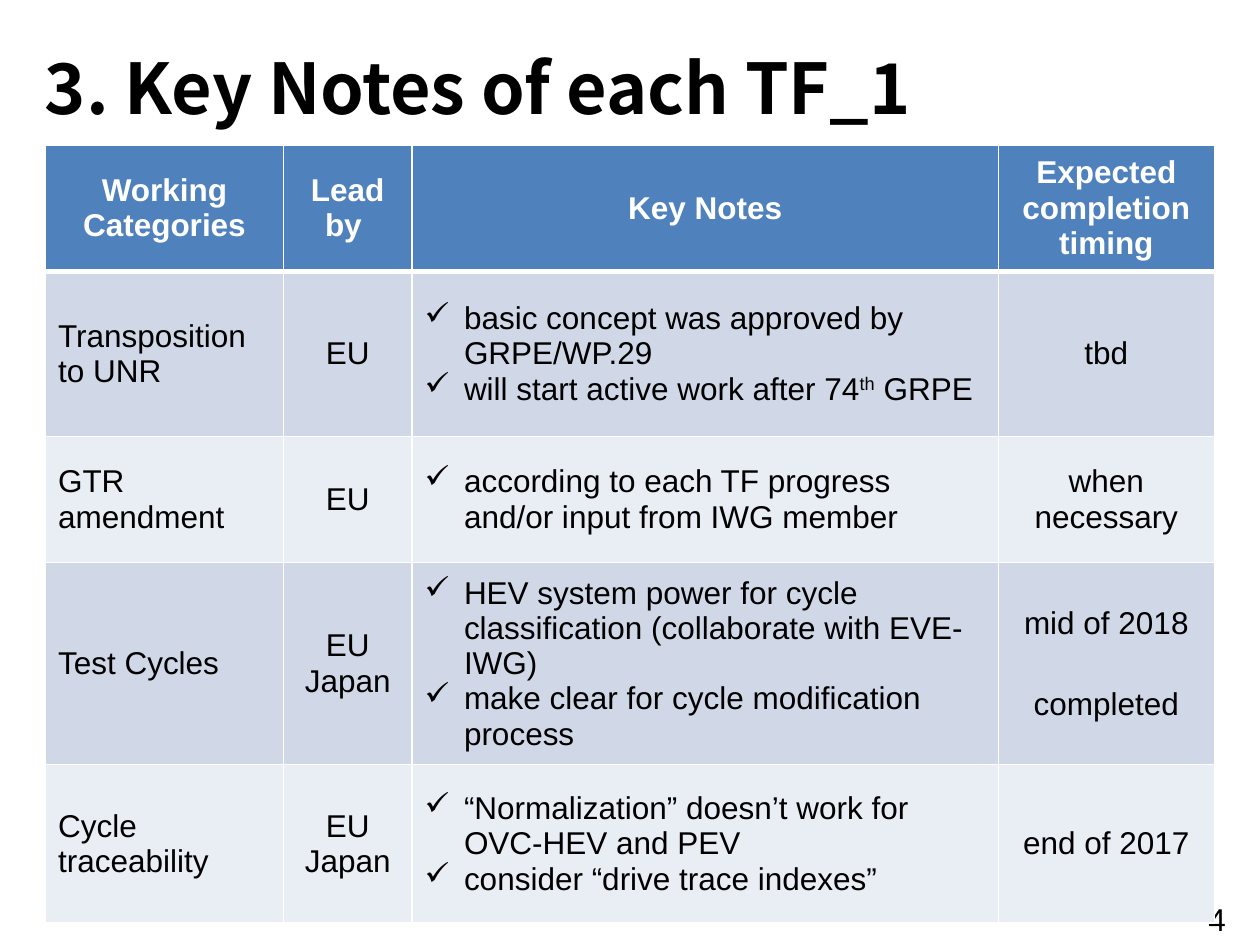
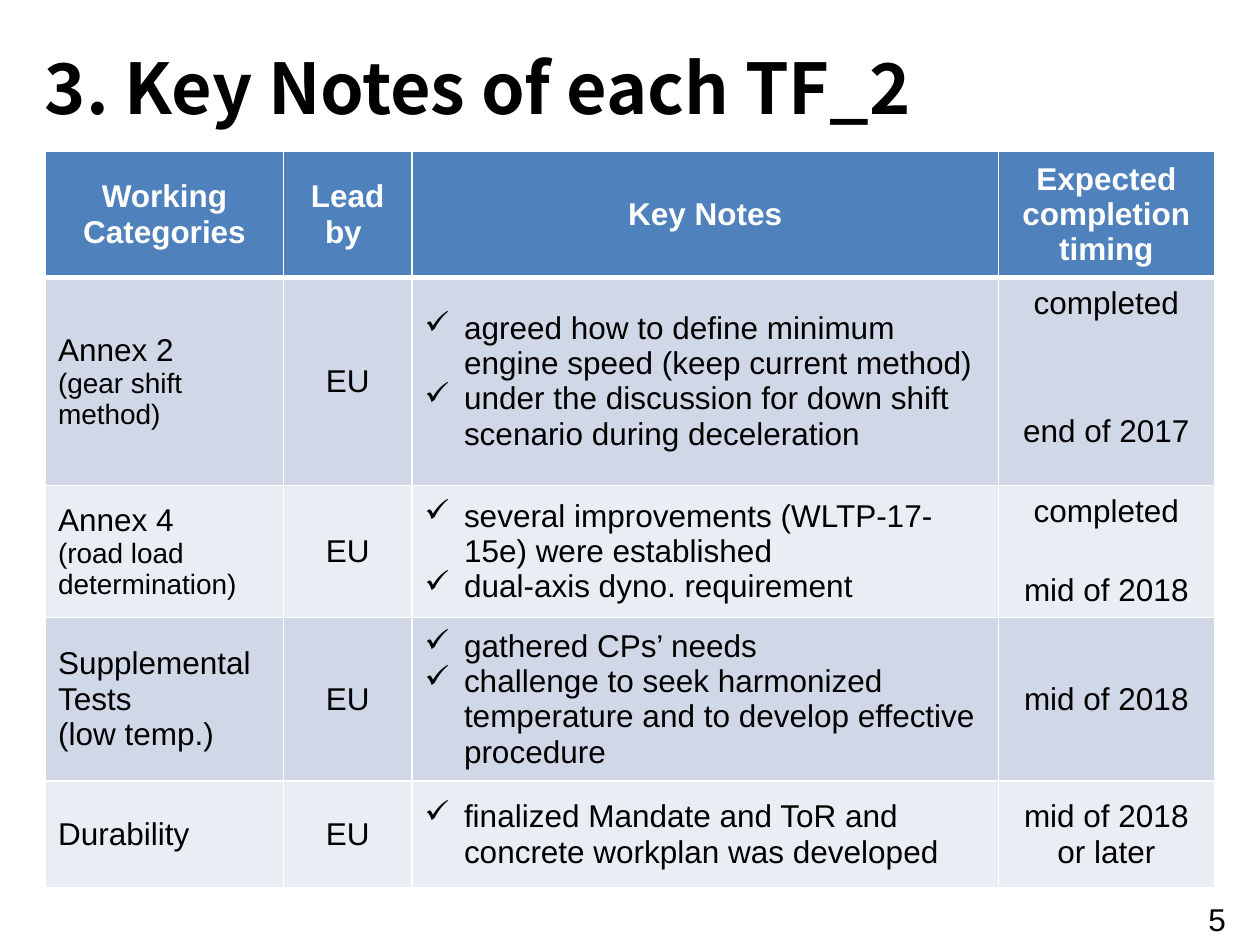
"""Builds the two key-note table slides of the task force report."""
from dataclasses import dataclass

from lxml import etree
from pptx import Presentation
from pptx.dml.color import RGBColor
from pptx.enum import text
from pptx.oxml import ns
from pptx.util import Pt

COLOURS = {"ink": "000000", "white": "FFFFFF", "header": "4F81BD",
           "band_dark": "D0D8E8", "band_light": "E9EDF4"}
BODY_FONT, TITLE_FONT = "Arial", "Noto Sans CJK JP"
BODY_SIZE, DETAIL_SIZE, TITLE_SIZE = 18, 16, 40
COLUMN_WIDTHS = (136, 73.5, 335, 123.5)
HEADINGS = ("Working\nCategories", "Lead by ", "Key Notes", "Expected completion timing")
HEADER_HEIGHT = 72
TITLE_BOX = (18.5, 21.5, 586, 55.5)
NUMBER_BOX = (683.5, 511, 36.5, 29)
TABLE_LEFT = 26
BULLET_INDENT = 22.5
CENTER = text.PP_ALIGN.CENTER


@dataclass
class WorkItem:
    """One table row; gap parts the timings, tail lifts them off the bottom."""
    height: float
    category: str
    lead: str
    notes: str
    timing: str
    detail: str = ""
    gap: float = 0
    tail: float = 3.6


TF_1 = (
    WorkItem(94.5, "Transposition to UNR", "EU",
             "basic concept was approved by GRPE/WP.29\n"
             "will start active work after 74^th^ GRPE", "tbd"),
    WorkItem(72, "GTR\namendment", "EU",
             "according to each TF progress and/or input from IWG member",
             "when necessary"),
    WorkItem(115.5, "Test Cycles", "EU\nJapan",
             "HEV system power for cycle classification (collaborate with EVE-IWG)\n"
             "make clear for cycle modification process",
             "mid of 2018\ncompleted", gap=26),
    WorkItem(90.5, "Cycle traceability", "EU\nJapan",
             "“Normalization” doesn’t work for OVC-HEV and PEV\n"
             "consider “drive trace indexes”", "end of 2017"),
)
TF_2 = (
    WorkItem(115, "Annex 2", "EU",
             "agreed how to define minimum engine speed (keep current method)\n"
             "under the discussion for down shift scenario during deceleration",
             "completed\nend of 2017", "(gear shift method)", gap=52.5, tail=19.5),
    WorkItem(72.5, "Annex 4", "EU",
             "several improvements (WLTP-17-15e) were established\n"
             "dual-axis dyno. requirement",
             "completed\nmid of 2018", "(road load determination)", gap=25),
    WorkItem(93.5, "Supplemental Tests\n(low temp.)", "EU",
             "gathered CPs’ needs\nchallenge to seek harmonized temperature "
             "and to develop effective procedure", "mid of 2018"),
    WorkItem(61, "Durability", "EU",
             "finalized Mandate and ToR and concrete workplan was developed",
             "mid of 2018 or later"),
)


def style(para, size=BODY_SIZE, colour="ink", bold=False, name=BODY_FONT):
    """Sets the font of a whole paragraph."""
    font = para.font
    font.name, font.size, font.bold = name, Pt(size), bold
    font.color.rgb = RGBColor.from_string(COLOURS[colour])


def write(frame, content, align=text.PP_ALIGN.LEFT, gap=0, **font):
    """Writes one paragraph per line; carets enclose superscript."""
    for index, line in enumerate(content.split("\n")):
        para = frame.add_paragraph() if index else frame.paragraphs[0]
        para.alignment = align
        if index and gap:
            para.space_before = Pt(gap)
        for part, piece in enumerate(line.split("^")):
            span = para.add_run()
            span.text = piece
            if part % 2:
                span._r.get_or_add_rPr().set("baseline", "30000")
        style(para, **font)


def add_bullets(frame):
    """Gives every paragraph a hanging check mark."""
    for para in frame.paragraphs:
        properties = para._p.get_or_add_pPr()
        properties.set("marL", str(Pt(BULLET_INDENT)))
        properties.set("indent", str(-Pt(BULLET_INDENT)))
        etree.SubElement(properties, ns.qn("a:buChar")).set("char", "✓")


def paint_cell(cell, colour, top=1, bottom=1):
    """Draws white borders, fills the cell and centres its text vertically."""
    properties = cell._tc.get_or_add_tcPr()
    for side, width in (("L", 1), ("R", 1), ("T", top), ("B", bottom)):
        line = etree.SubElement(properties, ns.qn(f"a:ln{side}"), w=str(Pt(width)))
        fill = etree.SubElement(line, ns.qn("a:solidFill"))
        etree.SubElement(fill, ns.qn("a:srgbClr"), val=COLOURS["white"])
    cell.fill.solid()
    cell.fill.fore_color.rgb = RGBColor.from_string(COLOURS[colour])
    cell.vertical_anchor = text.MSO_ANCHOR.MIDDLE


def add_title(page, box, title):
    """Places and formats the title placeholder."""
    holder = page.shapes.title
    holder.left, holder.top, holder.width, holder.height = map(Pt, box)
    frame = holder.text_frame
    frame.word_wrap = False
    frame.auto_size = text.MSO_AUTO_SIZE.NONE
    frame.vertical_anchor = text.MSO_ANCHOR.MIDDLE
    write(frame, title, size=TITLE_SIZE, bold=True, name=TITLE_FONT)


def add_page_number(page, box, number):
    """Writes the page number in the lower right corner."""
    frame = page.shapes.add_textbox(*map(Pt, box)).text_frame
    frame.word_wrap = False
    write(frame, str(number))


def fill_row(cells, item):
    """Writes one work item into its four cells."""
    category, lead, notes, timing = (cell.text_frame for cell in cells)
    write(category, item.category)
    if item.detail:
        para = category.add_paragraph()
        para.text = item.detail
        style(para, DETAIL_SIZE)
    write(lead, item.lead, CENTER)
    write(notes, item.notes)
    add_bullets(notes)
    write(timing, item.timing, CENTER, item.gap)
    cells[3].margin_bottom = Pt(item.tail)


def add_work_table(page, left, top, items):
    """Builds the table of work items with its header row."""
    heights = [HEADER_HEIGHT] + [item.height for item in items]
    box = (left, top, sum(COLUMN_WIDTHS), sum(heights))
    table = page.shapes.add_table(len(heights), len(COLUMN_WIDTHS), *map(Pt, box)).table
    for column, width in zip(table.columns, COLUMN_WIDTHS):
        column.width = Pt(width)
    for row, height in zip(table.rows, heights):
        row.height = Pt(height)
    for cell, heading in zip(table.rows[0].cells, HEADINGS):
        paint_cell(cell, "header", bottom=3)
        write(cell.text_frame, heading, CENTER, colour="white", bold=True)
    for index, item in enumerate(items, 1):
        cells = list(table.rows[index].cells)
        for cell in cells:
            paint_cell(cell, "band_dark" if index % 2 else "band_light",
                       top=3 if index == 1 else 1)
        fill_row(cells, item)


def add_notes_page(deck, title, number, table_top, items):
    """Adds a slide with title, page number and work table."""
    page = deck.slides.add_slide(deck.slide_layouts.get_by_name("Title Only"))
    add_page_number(page, NUMBER_BOX, number)
    add_work_table(page, TABLE_LEFT, table_top, items)
    add_title(page, TITLE_BOX, title)


def main():
    """Builds and saves the deck."""
    deck = Presentation()
    deck.slide_width, deck.slide_height = Pt(720), Pt(540)
    add_notes_page(deck, "3. Key Notes of each TF_1", 4, 83, TF_1)
    add_notes_page(deck, "3. Key Notes of each TF_2", 5, 86.5, TF_2)
    deck.save("out.pptx")


if __name__ == "__main__":
    main()
